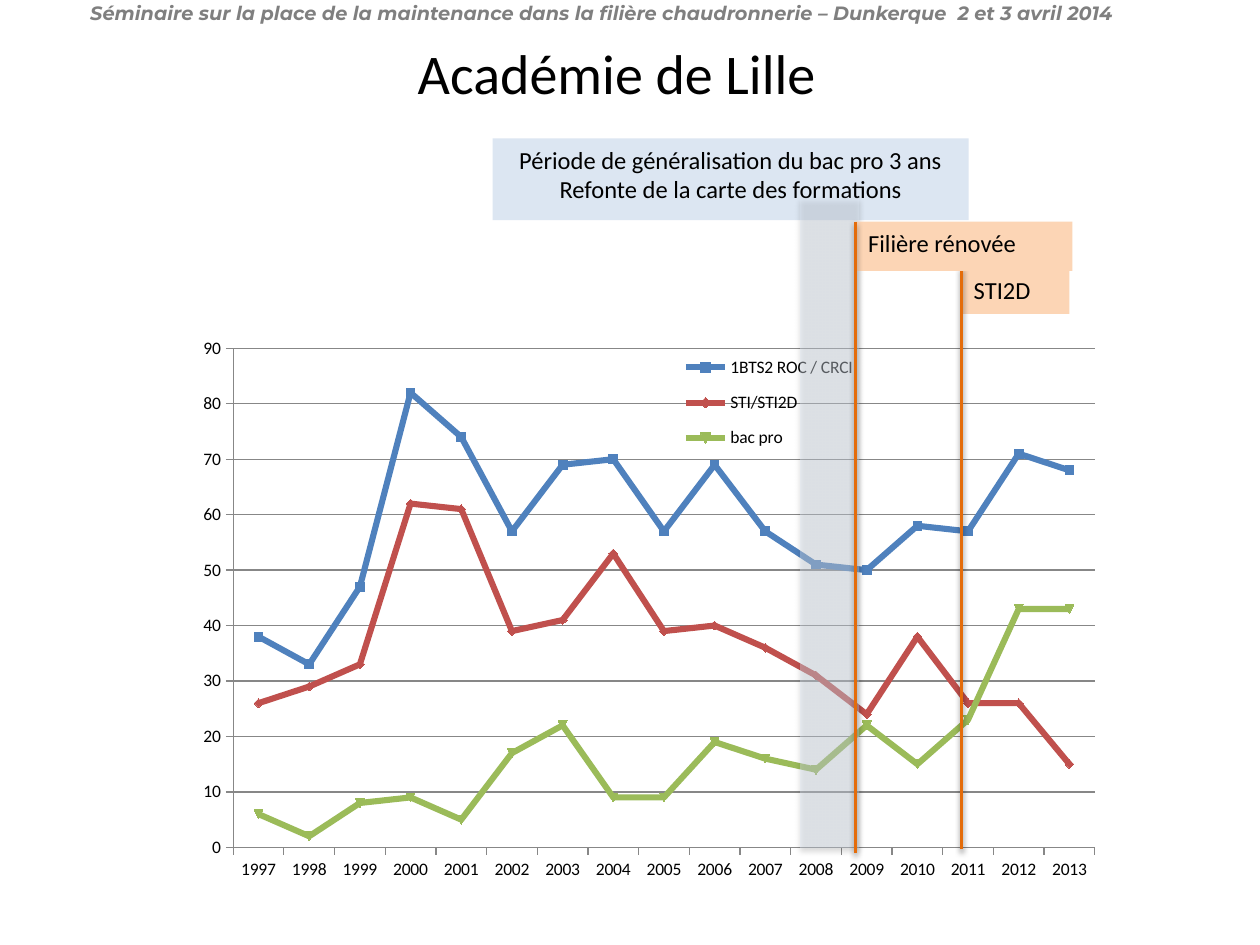
from dataclasses import dataclass

from lxml import etree
from pptx import Presentation
from pptx.chart.data import CategoryChartData
from pptx.dml.color import RGBColor
from pptx.enum.chart import XL_CHART_TYPE, XL_LEGEND_POSITION, XL_TICK_MARK
from pptx.enum.shapes import MSO_CONNECTOR, MSO_SHAPE
from pptx.enum.text import MSO_ANCHOR, PP_ALIGN
from pptx.oxml import parse_xml
from pptx.oxml.ns import nsdecls, qn
from pptx.util import Cm, Pt


@dataclass(frozen=True)
class Theme:
    text: str = "000000"
    header: str = "7F7F7F"
    grid: str = "878787"
    period: str = "DCE6F2"
    reform: str = "FCD5B5"
    marker: str = "E46C0A"
    series: tuple = ("4F81BD", "C0504D", "9BBB59")
    font: str = "Calibri"
    header_font: str = "Montserrat"
    title_size: int = 32
    label_size: int = 14
    header_size: int = 11
    chart_size: int = 10


THEME = Theme()
YEARS = range(1997, 2014)
SERIES = {
    "1BTS2 ROC / CRCI": (38, 33, 47, 82, 74, 57, 69, 70, 57, 69, 57, 51, 50, 58, 57, 71, 68),
    "STI/STI2D": (26, 29, 33, 62, 61, 39, 41, 53, 39, 40, 36, 31, 24, 38, 26, 26, 15),
    "bac pro": (6, 2, 8, 9, 5, 17, 22, 9, 9, 19, 16, 14, 22, 15, 23, 43, 43),
}


def rgb(value):
    return RGBColor.from_string(value)


def cm(*lengths):
    return [Cm(v) for v in lengths]


def write(p, text, size, color=THEME.text, font=THEME.font, align=None):
    p.alignment = align
    r = p.add_run()
    r.text = text
    r.font.size, r.font.name = Pt(size), font
    r.font.color.rgb = rgb(color)
    return r


def add_shadow(sp, alpha, dist):
    """Soft shadow cast downwards; dist in points."""
    sp_pr = sp._element.spPr
    for old in sp_pr.findall(qn("a:effectLst")):
        sp_pr.remove(old)
    sp_pr.append(parse_xml(
        f'<a:effectLst {nsdecls("a")}><a:outerShdw blurRad="{Pt(3.1)}" '
        f'dist="{Pt(dist)}" dir="5400000" rotWithShape="0"><a:srgbClr val="000000">'
        f'<a:alpha val="{alpha * 1000}"/></a:srgbClr></a:outerShdw></a:effectLst>'))


def add_box(shapes, box, fill, lines=(), align=PP_ALIGN.LEFT):
    sp = shapes.add_shape(MSO_SHAPE.RECTANGLE, *cm(*box))
    sp.shadow.inherit = False
    sp.fill.solid()
    sp.fill.fore_color.rgb = rgb(fill)
    sp.line.fill.background()
    tf = sp.text_frame
    tf.word_wrap, tf.vertical_anchor = True, MSO_ANCHOR.TOP
    for i, line in enumerate(lines):
        p = tf.add_paragraph() if i else tf.paragraphs[0]
        write(p, line, THEME.label_size, align=align)
    return sp


def set_layout(parent, before, box, inner=False):
    """Give a chart part a fixed place, as fractions of the chart."""
    for old in parent.findall(qn("c:layout")):
        parent.remove(old)
    target = '<c:layoutTarget val="inner"/>' if inner else ""
    modes = "".join(f'<c:{k}Mode val="edge"/>' for k in "xy")
    sizes = "".join(f'<c:{k} val="{v}"/>' for k, v in zip("xywh", box))
    layout = parse_xml(f'<c:layout {nsdecls("c")}><c:manualLayout>{target}{modes}{sizes}'
                       '</c:manualLayout></c:layout>')
    if before is None:
        parent.insert(0, layout)
    else:
        before.addnext(layout)


def add_header(slide, box):
    tf = slide.shapes.add_textbox(*cm(*box)).text_frame
    tf.word_wrap = False
    r = write(tf.paragraphs[0],
              "Séminaire sur la place de la maintenance dans la filière chaudronnerie"
              " – Dunkerque  2 et 3 avril 2014",
              THEME.header_size, THEME.header, THEME.header_font)
    r.font.bold = r.font.italic = True


def add_title(slide, box):
    title = slide.shapes.title
    title.left, title.top, title.width, title.height = cm(*box)
    tf = title.text_frame
    tf.vertical_anchor = MSO_ANCHOR.MIDDLE
    write(tf.paragraphs[0], "Académie de Lille", THEME.title_size, align=PP_ALIGN.CENTER)


def add_enrolment_chart(slide, box):
    data = CategoryChartData()
    data.categories = YEARS
    for name, values in SERIES.items():
        data.add_series(name, values)
    chart = slide.shapes.add_chart(XL_CHART_TYPE.LINE_MARKERS, *cm(*box), data).chart
    chart.has_title = False
    chart.font.size, chart.font.name = Pt(THEME.chart_size), THEME.font
    chart.font.color.rgb = rgb(THEME.text)

    # Curves
    plot = chart.plots[0]
    plot.vary_by_categories = False
    for series, color in zip(plot.series, THEME.series):
        series.smooth = False
        series.format.line.color.rgb = rgb(color)
        series.format.line.width = Pt(3.5)

    # Axes
    y_axis = chart.value_axis
    y_axis.minimum_scale, y_axis.maximum_scale, y_axis.major_unit = 0, 90, 10
    y_axis.has_major_gridlines = True
    lines = [y_axis.major_gridlines.format.line]
    for axis in (y_axis, chart.category_axis):
        axis.major_tick_mark = XL_TICK_MARK.OUTSIDE
        lines.append(axis.format.line)
    for line in lines:
        line.color.rgb, line.width = rgb(THEME.grid), Pt(0.75)

    # Legend inside the plot
    chart.has_legend = True
    legend = chart.legend
    legend.position = XL_LEGEND_POSITION.RIGHT
    legend.include_in_layout = False
    legend_xml = legend._element
    set_layout(legend_xml, legend_xml.find(qn("c:legendPos")), (0.53, 0.06, 0.2, 0.19))
    set_layout(plot._element.getparent(), None, (0.07, 0.07, 0.9, 0.78), inner=True)


def add_period(slide, box):
    """Caption with the translucent band that marks the period."""
    x, y, w, h = box
    shapes = slide.shapes.add_group_shape().shapes
    add_box(shapes, box, THEME.period,
            ("Période de généralisation du bac pro 3 ans", "Refonte de la carte des formations"),
            PP_ALIGN.CENTER)
    band = add_box(shapes, (x + 6.2, y + 1.2, 1.19, 13.11), THEME.period)
    color = band._element.spPr.find(".//" + qn("a:srgbClr"))
    etree.SubElement(color, qn("a:alpha")).set("val", "40000")
    add_shadow(band, 35, 1.8)


def add_reform(slide, box, label, bottom):
    """Label hung on a vertical line that marks the year of a reform."""
    x, y = box[:2]
    shapes = slide.shapes.add_group_shape().shapes
    add_box(shapes, box, THEME.reform, (label,))
    line = shapes.add_connector(MSO_CONNECTOR.STRAIGHT, *cm(x, bottom, x, y))
    line.line.color.rgb, line.line.width = rgb(THEME.marker), Pt(2)
    add_shadow(line, 38, 1.6)


def main():
    prs = Presentation()
    prs.slide_width, prs.slide_height = cm(25.4, 19.05)
    slide = prs.slides.add_slide(prs.slide_layouts[5])
    add_header(slide, (1.57, -0.1, 22.17, 0.74))
    add_title(slide, (4.32, 0.38, 16.23, 2.16))
    add_enrolment_chart(slide, (3.35, 6.12, 19.3, 12.9))
    add_period(slide, (9.93, 2.79, 9.6, 1.65))
    add_reform(slide, (19.38, 5.41, 2.18, 0.92), "STI2D", 17.12)
    add_reform(slide, (17.25, 4.47, 4.37, 0.99), "Filière rénovée", 17.2)
    prs.save("out.pptx")


if __name__ == "__main__":
    main()
